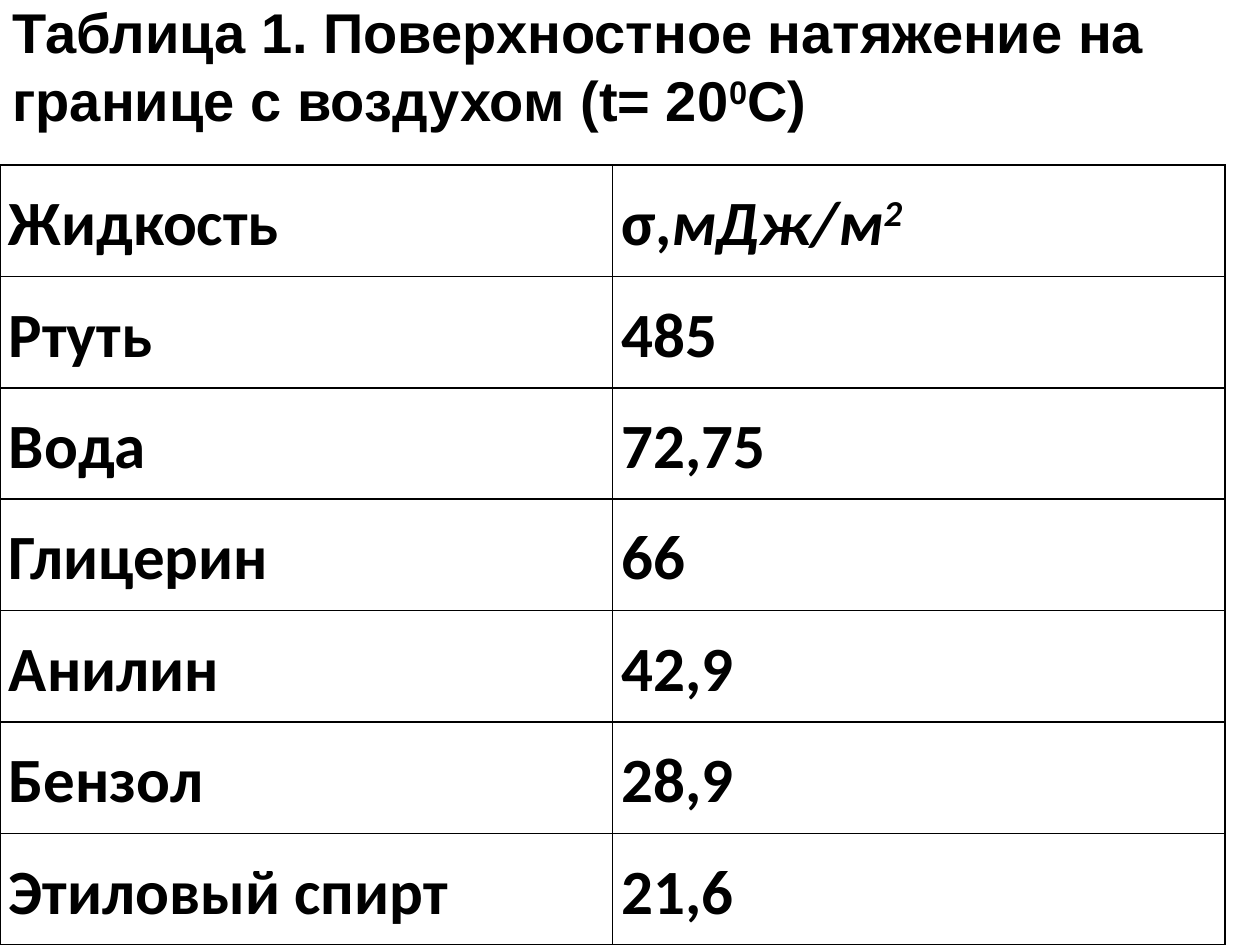
import pptx
import pptx.dml.color
import pptx.enum.text
import pptx.oxml
import pptx.oxml.ns
import pptx.util

PX = 914400 // 126
BLACK = "000000"
ROWS = [
    # Each cell is a list of (text, italic, superscript) runs
    [[("Жидкость", False, False)],
     [("σ,", False, False), ("мДж/м", True, False), ("2", True, True)]],
]
for liquid, tension in [("Ртуть", "485"), ("Вода", "72,75"), ("Глицерин", "66"),
                        ("Анилин", "42,9"), ("Бензол", "28,9"),
                        ("Этиловый спирт", "21,6")]:
    ROWS.append([[(liquid, False, False)], [(tension, False, False)]])
TITLE = [("Таблица 1. Поверхностное натяжение на границе с воздухом (t= 20", False, False),
         ("0", False, True), ("С)", False, False)]


def color(value):
    return pptx.dml.color.RGBColor.from_string(value)


def add_runs(paragraph, parts, font_name, size):
    for text, italic, superscript in parts:
        run = paragraph.add_run()
        run.text = text
        run.font.name = font_name
        run.font.size = pptx.util.Pt(size)
        run.font.bold = True
        run.font.italic = italic
        run.font.color.rgb = color(BLACK)
        if superscript:
            run.font._element.set("baseline", "30000")


presentation = pptx.Presentation()
presentation.slide_width = pptx.util.Inches(10)
presentation.slide_height = pptx.util.Inches(7.5)
slide = presentation.slides.add_slide(presentation.slide_layouts[6])

# Table of surface tension
width, height = 1225 * PX, 780 * PX
frame = slide.shapes.add_table(len(ROWS), 2, 0, 165 * PX, width, height)
table = frame.table
for column in table.columns:
    column.width = width // 2
for row, row_parts in zip(table.rows, ROWS):
    row.height = height // len(ROWS)
    for cell, parts in zip(row.cells, row_parts):
        cell.margin_left = cell.margin_right = 9 * PX
        cell.margin_top = cell.margin_bottom = 9 * PX
        paragraph = cell.text_frame.paragraphs[0]
        paragraph.line_spacing = 1.15
        add_runs(paragraph, parts, "Calibri", 36)

        # Borders come before the fill in the cell properties
        properties = cell._tc.get_or_add_tcPr()
        for side in ("lnL", "lnR", "lnT", "lnB"):
            properties.append(pptx.oxml.parse_xml(
                f'<a:{side} {pptx.oxml.ns.nsdecls("a")} w="12700"><a:solidFill>'
                f'<a:srgbClr val="{BLACK}"/></a:solidFill></a:{side}>'))
        cell.fill.background()

# Title
title = slide.shapes.add_textbox(0, -16 * PX, 1260 * PX, 301 * PX)
title.text_frame.word_wrap = True
title.text_frame.vertical_anchor = pptx.enum.text.MSO_ANCHOR.TOP
title.text_frame.margin_top = 14 * PX
add_runs(title.text_frame.paragraphs[0], TITLE, "Arial", 32)

presentation.save("out.pptx")
